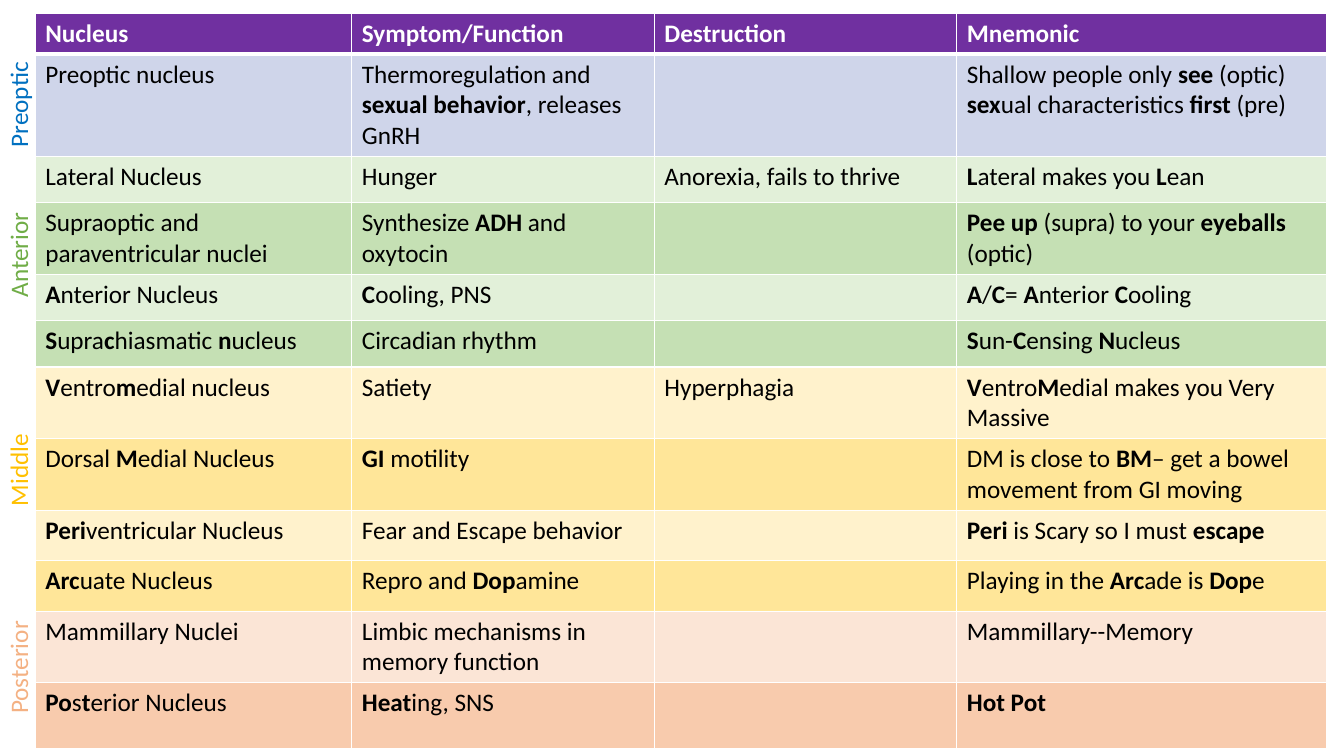
from lxml.etree import SubElement
from pptx import Presentation
from pptx.dml.color import RGBColor
from pptx.enum.text import MSO_AUTO_SIZE as AutoSize
from pptx.oxml.ns import qn
from pptx.util import Inches, Pt

# Content: double asterisks switch bold on and off
HEADER = ("Nucleus", "Symptom/Function", "Destruction", "Mnemonic")
# shade, row height, cells
ROWS = [
    ("blue", 0.46, ("Preoptic nucleus",
                    "Thermoregulation and **sexual behavior**, releases GnRH", "",
                    "Shallow people only **see** (optic) **sex**ual characteristics **first** (pre)")),
    ("pale green", 0.46, ("Lateral Nucleus", "Hunger", "Anorexia, fails to thrive",
                          "**L**ateral makes you **L**ean")),
    ("green", 0.65, ("Supraoptic and paraventricular nuclei",
                     "Synthesize **ADH** and oxytocin", "",
                     "**Pee up** (supra) to your **eyeballs** (optic)")),
    ("pale green", 0.46, ("**A**nterior Nucleus", "**C**ooling, PNS", "",
                          "**A**/**C**= **A**nterior **C**ooling")),
    ("green", 0.46, ("**S**upra**c**hiasmatic **n**ucleus", "Circadian rhythm", "",
                     "**S**un-**C**ensing **N**ucleus")),
    ("pale yellow", 0.68, ("**V**entro**m**edial nucleus", "Satiety", "Hyperphagia",
                           "**V**entro**M**edial makes you Very Massive")),
    ("yellow", 0.65, ("Dorsal **M**edial Nucleus", "**GI** motility", "",
                      "DM is close to **BM**– get a bowel movement from GI moving")),
    ("pale yellow", 0.5, ("**Peri**ventricular Nucleus", "Fear and Escape behavior", "",
                          "**Peri** is Scary so I must **escape**")),
    ("yellow", 0.5, ("**Arc**uate Nucleus", "Repro and **Dop**amine", "",
                     "Playing in the **Arc**ade is **Dop**e")),
    ("pale orange", 0.65, ("Mammillary Nuclei", "Limbic mechanisms in memory function", "",
                           "Mammillary--Memory")),
    ("orange", 0.65, ("**Po**s**t**erior Nucleus", "**Heat**ing, SNS", "", "**Hot Pot**")),
]
# region name, top of its unrotated box
REGIONS = [("Preoptic", 0.77), ("Anterior", 2.26), ("Middle", 4.33), ("Posterior", 6.39)]

COLORS = {
    "white": "FFFFFF", "black": "000000", "purple": "7030A0", "blue": "CFD5EA",
    "pale green": "E2F0D9", "green": "C5E0B4", "pale yellow": "FFF2CC",
    "yellow": "FFE699", "pale orange": "FBE5D6", "orange": "F8CBAD",
    "Preoptic": "0070C0", "Anterior": "70AD47", "Middle": "FFC000", "Posterior": "F4B183",
}

# Layout in inches
COLUMN_WIDTHS = (3.14, 3, 3, 3.67)
HEADER_HEIGHT = 0.37
TABLE_LEFT, TABLE_TOP = 0.35, 0.13
LABEL_LEFT, LABEL_WIDTH, LABEL_HEIGHT = -0.41, 1.18, 0.4


def write(frame, text, color="black", bold=False, size=18, font="Calibri"):
    para = frame.paragraphs[0]
    for index, part in enumerate(text.split("**")):
        if part:
            span = para.add_run()
            span.text = part
            span.font.name, span.font.size = font, Pt(size)
            span.font.bold = bold or index % 2 == 1
            span.font.color.rgb = RGBColor.from_string(COLORS[color])


def add_borders(cell, top, bottom):
    properties = cell._tc.get_or_add_tcPr()
    for side, width in (("L", 1), ("R", 1), ("T", top), ("B", bottom)):
        line = SubElement(properties, qn(f"a:ln{side}"), w=str(Pt(width)))
        fill = SubElement(line, qn("a:solidFill"))
        SubElement(fill, qn("a:srgbClr"), val=COLORS["white"])


deck = Presentation()
deck.slide_width, deck.slide_height = Inches(13.33), Inches(7.5)
page = deck.slides.add_slide(deck.slide_layouts[6])

# Table of nuclei
lines = [("purple", HEADER_HEIGHT, HEADER)] + ROWS
total_height = sum(height for _, height, _ in lines)
table = page.shapes.add_table(
    len(lines), len(COLUMN_WIDTHS), Inches(TABLE_LEFT), Inches(TABLE_TOP),
    Inches(sum(COLUMN_WIDTHS)), Inches(total_height)).table
for column, width in zip(table.columns, COLUMN_WIDTHS):
    column.width = Inches(width)
for row, (shade, height, texts) in enumerate(lines):
    table.rows[row].height = Inches(height)
    is_header = row == 0
    for column, text in enumerate(texts):
        cell = table.cell(row, column)
        add_borders(cell, top=3 if row == 1 else 1, bottom=3 if is_header else 1)
        cell.fill.solid()
        cell.fill.fore_color.rgb = RGBColor.from_string(COLORS[shade])
        write(cell.text_frame, text, color="white" if is_header else "black", bold=is_header)

# Region labels, read upwards along the left edge
for region, top in REGIONS:
    box = page.shapes.add_textbox(Inches(LABEL_LEFT), Inches(top),
                                  Inches(LABEL_WIDTH), Inches(LABEL_HEIGHT))
    box.rotation = 270
    box.text_frame.word_wrap = True
    box.text_frame.auto_size = AutoSize.SHAPE_TO_FIT_TEXT
    write(box.text_frame, region, color=region)

deck.save("out.pptx")
